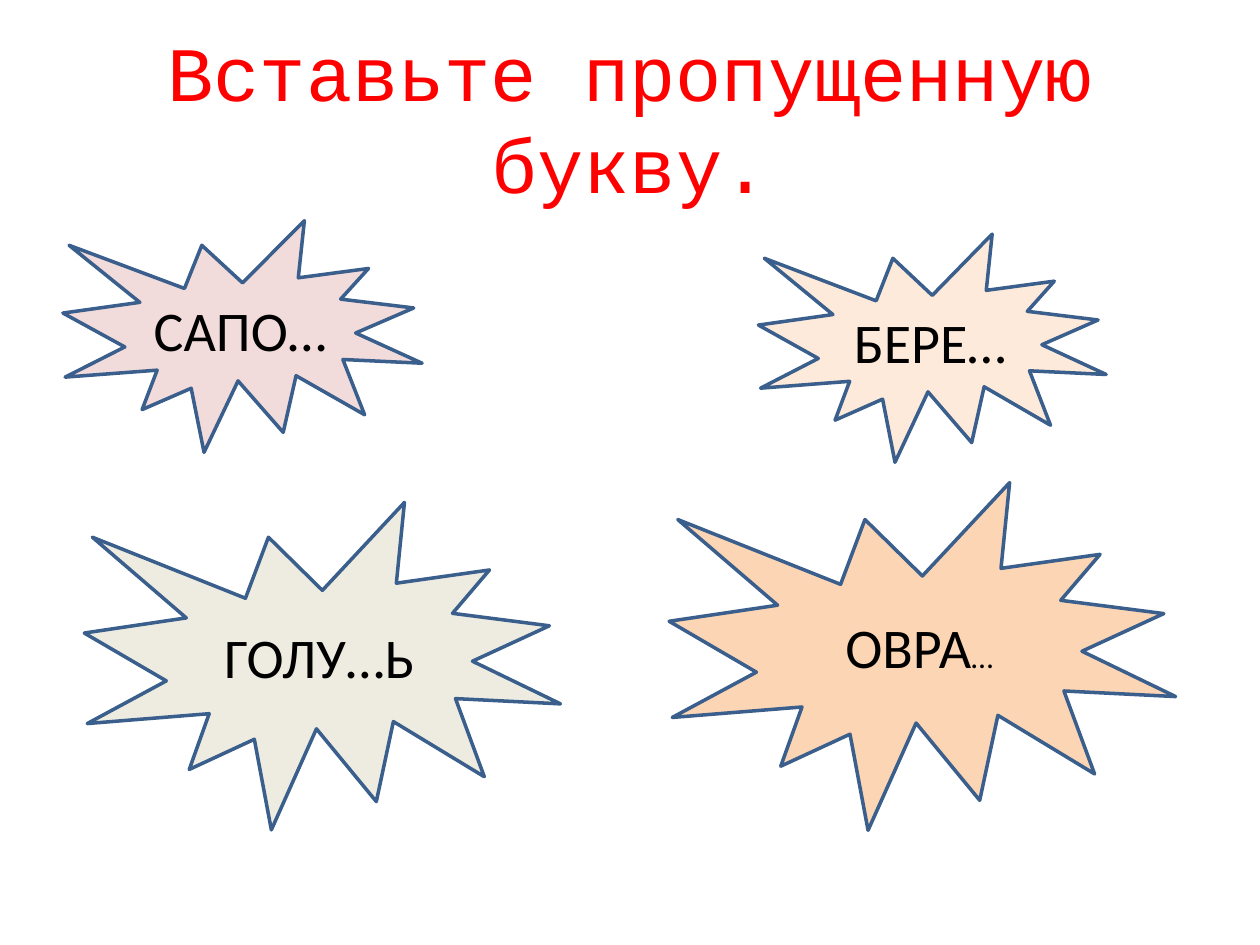
"""Build a spelling exercise slide with four starburst word cards."""
from pptx import Presentation
from pptx import util as u
from pptx.dml.color import RGBColor
from pptx.enum import shapes, text

TITLE = "Вставьте пропущенную букву."
TITLE_BOX = (1.27, 0.76, 22.86, 3.18)
OUTLINE = "3A5F8C"
WORD_CARDS = [
    ((1.27, 4.45, 7.24, 4.67), "F2DCDB", [("САПО…", 32)]),
    ((15.29, 4.72, 7.01, 4.6), "FDEADA", [("БЕРЕ…", 32)]),
    ((1.7, 10.13, 9.6, 6.6), "EEECE1", [("ГОЛУ…Ь", 32)]),
    ((13.49, 9.73, 10.21, 7.01), "FCD5B5", [("ОВРА", 32), ("…", 18)]),
]


def color(value):
    return RGBColor.from_string(value)


def write(frame, runs, font_name, font_color):
    frame.word_wrap = True
    frame.vertical_anchor = text.MSO_ANCHOR.MIDDLE
    paragraph = frame.paragraphs[0]
    paragraph.alignment = text.PP_ALIGN.CENTER
    for content, size in runs:
        run = paragraph.add_run()
        run.text = content
        run.font.name = font_name
        run.font.size = u.Pt(size)
        run.font.color.rgb = color(font_color)


def add_title(slide):
    title = slide.shapes.title
    title.left, title.top, title.width, title.height = map(u.Cm, TITLE_BOX)
    write(title.text_frame, [(TITLE, 44)], "Courier New", "FF0000")


def add_word_card(slide, box, fill, runs):
    shape = slide.shapes.add_shape(shapes.MSO_SHAPE.EXPLOSION1, *map(u.Cm, box))
    shape.shadow.inherit = False
    shape.fill.solid()
    shape.fill.fore_color.rgb = color(fill)
    shape.line.color.rgb = color(OUTLINE)
    shape.line.width = u.Pt(2)
    frame = shape.text_frame
    frame.margin_left = frame.margin_right = 0
    write(frame, runs, "Calibri", "000000")


def main():
    presentation = Presentation()
    presentation.slide_width, presentation.slide_height = u.Cm(25.4), u.Cm(19.05)
    slide = presentation.slides.add_slide(presentation.slide_layouts[5])
    add_title(slide)
    for box, fill, runs in WORD_CARDS:
        add_word_card(slide, box, fill, runs)
    presentation.save("out.pptx")


if __name__ == "__main__":
    main()
